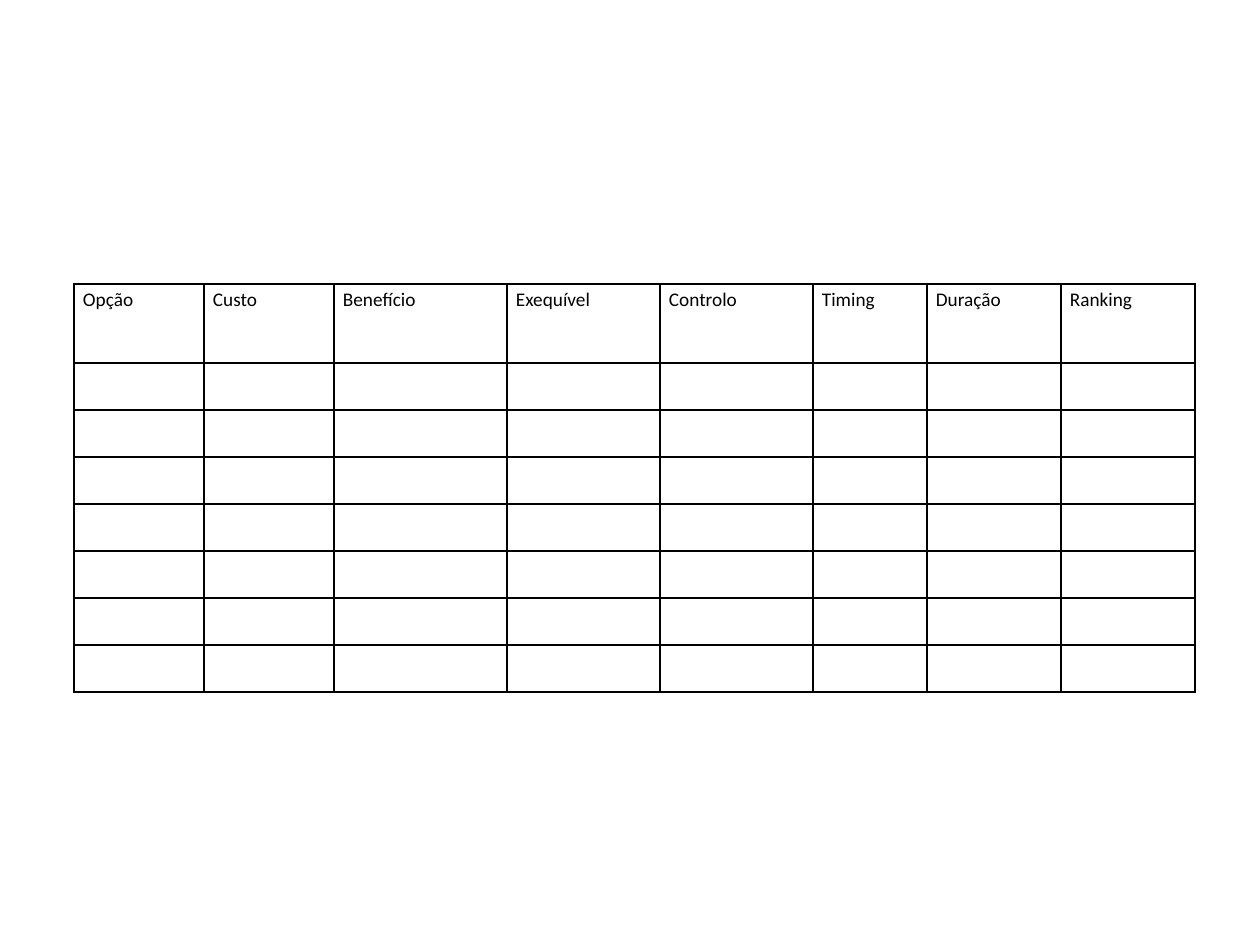
from lxml import etree
from pptx import Presentation
from pptx.dml.color import RGBColor
from pptx.enum.text import MSO_ANCHOR
from pptx.oxml.ns import qn
from pptx.util import Pt

HEADERS = ["Opção", "Custo", "Benefício", "Exequível",
           "Controlo", "Timing", "Duração", "Ranking"]
COL_WIDTHS = [130, 130, 173, 153, 153, 114, 134, 134]
ROW_HEIGHTS = [79] + [47] * 7
LEFT, TOP = 74, 284
CELL_INSET = 9

BLACK = RGBColor(0, 0, 0)
FONT = "Calibri"
ANCHOR_TOP = MSO_ANCHOR.TOP
EMU_PER_PX = 914400 / 126


def px(n):
    return round(n * EMU_PER_PX)


def write(tf, text, size=11, color=BLACK, spacing=1.15):
    p = tf.paragraphs[0]
    p.line_spacing = spacing
    r = p.add_run()
    r.text = text
    r.font.name = FONT
    r.font.size = Pt(size)
    r.font.bold = False
    r.font.color.rgb = color


def add_borders(cell, color=BLACK, width=1):
    tc_pr = cell._tc.get_or_add_tcPr()
    for side in ("lnL", "lnR", "lnT", "lnB"):
        ln = etree.SubElement(tc_pr, qn(f"a:{side}"), w=str(Pt(width)))
        fill = etree.SubElement(ln, qn("a:solidFill"))
        etree.SubElement(fill, qn("a:srgbClr"), val=str(color))


def format_cell(cell):
    cell.margin_left = cell.margin_right = px(CELL_INSET)
    cell.margin_top = cell.margin_bottom = 0
    cell.vertical_anchor = ANCHOR_TOP
    add_borders(cell)
    cell.fill.background()


def main():
    prs = Presentation()
    prs.slide_width, prs.slide_height = px(1260), px(945)
    s = prs.slides.add_slide(prs.slide_layouts[6])
    table = s.shapes.add_table(
        len(ROW_HEIGHTS), len(COL_WIDTHS), px(LEFT), px(TOP),
        px(sum(COL_WIDTHS)), px(sum(ROW_HEIGHTS))).table
    table.first_row = table.horz_banding = False
    for col, width in zip(table.columns, COL_WIDTHS):
        col.width = px(width)
    for row, height in zip(table.rows, ROW_HEIGHTS):
        row.height = px(height)
    for cell in table.iter_cells():
        format_cell(cell)
    for cell, header in zip(table.rows[0].cells, HEADERS):
        write(cell.text_frame, header)
    prs.save("out.pptx")


if __name__ == "__main__":
    main()
